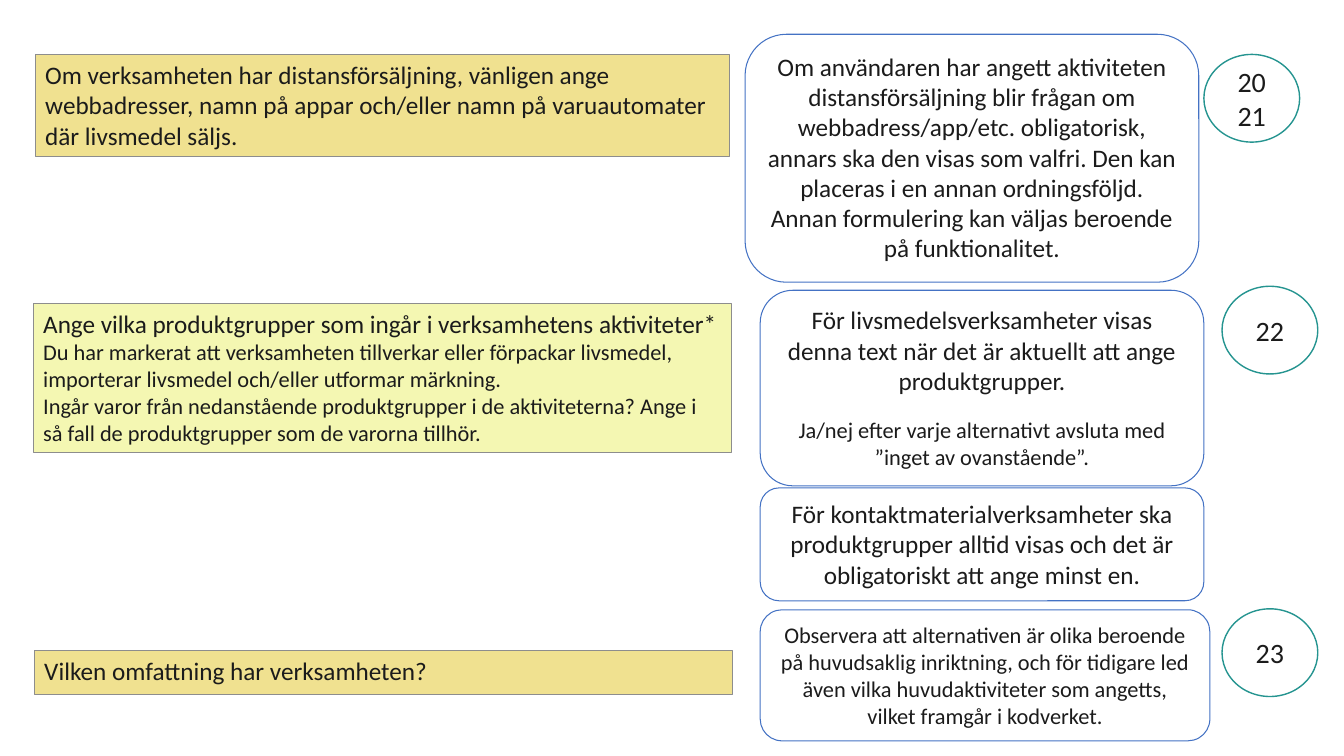
from dataclasses import dataclass

from pptx import Presentation
from pptx.dml.color import RGBColor
from pptx.enum.shapes import MSO_SHAPE
from pptx.enum.text import MSO_ANCHOR, MSO_AUTO_SIZE, PP_ALIGN
from pptx.util import Inches, Pt

RECT, ROUNDED, OVAL = MSO_SHAPE.RECTANGLE, MSO_SHAPE.ROUNDED_RECTANGLE, MSO_SHAPE.OVAL
LEFT, CENTER = PP_ALIGN.LEFT, PP_ALIGN.CENTER
TOP, MIDDLE = MSO_ANCHOR.TOP, MSO_ANCHOR.MIDDLE
FIT, FIXED = MSO_AUTO_SIZE.SHAPE_TO_FIT_TEXT, MSO_AUTO_SIZE.NONE


@dataclass(frozen=True)
class Theme:
    font: str = "Calibri"
    ink: str = "1B1B1B"
    white: str = "FFFFFF"
    sand: str = "F0E190"
    lime: str = "F4F7B2"
    grey: str = "8D8D8D"
    blue: str = "4472C4"
    teal: str = "259490"
    number: int = 20
    body: int = 18
    small: int = 16


T = Theme()


def add_box(kind, at, paragraphs, *, fill=None, line, width, align=CENTER,
            anchor=TOP, fit=FIT):
    """Add an outlined shape; each paragraph is (text, size, space before)."""
    sp = slide.shapes.add_shape(kind, *map(Inches, at))
    sp.shadow.inherit = False
    if fill:
        sp.fill.solid()
        sp.fill.fore_color.rgb = RGBColor.from_string(fill)
    else:
        sp.fill.background()
    sp.line.color.rgb = RGBColor.from_string(line)
    sp.line.width = Pt(width)
    tf = sp.text_frame
    tf.word_wrap = True
    tf.auto_size = fit
    tf.vertical_anchor = anchor
    for i, (text, size, before) in enumerate(paragraphs):
        p = tf.paragraphs[0] if i == 0 else tf.add_paragraph()
        p.alignment = align
        if before:
            p.space_before = Pt(before)
        r = p.add_run()
        r.text = text
        r.font.name = T.font
        r.font.size = Pt(size)
        r.font.color.rgb = RGBColor.from_string(T.ink)


prs = Presentation()
prs.slide_width, prs.slide_height = Inches(13.33), Inches(7.5)
slide = prs.slides.add_slide(prs.slide_layouts[6])

# Questions in the form
questions = [
    ((0.35, 0.54, 6.88, 1.01), T.sand, [
        ("Om verksamheten har distansförsäljning, vänligen ange webbadresser, "
         "namn på appar och/eller namn på varuautomater där livsmedel säljs.", T.body, 0)]),
    ((0.33, 3.01, 6.92, 1.48), T.lime, [
        ("Ange vilka produktgrupper som ingår i verksamhetens aktiviteter*", T.body, 0),
        ("Du har markerat att verksamheten tillverkar eller förpackar livsmedel, "
         "importerar livsmedel och/eller utformar märkning.", T.small, 0),
        ("Ingår varor från nedanstående produktgrupper i de aktiviteterna? Ange i så "
         "fall de produktgrupper som de varorna tillhör.", T.small, 0)]),
    ((0.34, 6.45, 6.92, 0.44), T.sand, [
        ("Vilken omfattning har verksamheten?", T.body, 0)]),
]
for at, fill, paragraphs in questions:
    add_box(RECT, at, paragraphs, fill=fill, line=T.grey, width=0.5, align=LEFT)

# Guidance beside each question
notes = [
    ((7.39, 0.34, 4.5, 2.46), None, [
        ("Om användaren har angett aktiviteten distansförsäljning blir frågan om "
         "webbadress/app/etc. obligatorisk, annars ska den visas som valfri. Den kan "
         "placeras i en annan ordningsföljd. Annan formulering kan väljas beroende på "
         "funktionalitet.", T.body, 0)]),
    ((7.54, 2.88, 4.4, 1.94), None, [
        ("För livsmedelsverksamheter visas denna text när det är aktuellt att ange "
         "produktgrupper.", T.body, 0),
        ("Ja/nej efter varje alternativt avsluta med ”inget av ovanstående”.",
         T.small, 14.5)]),
    ((7.54, 4.84, 4.4, 1.12), None, [
        ("För kontaktmaterialverksamheter ska produktgrupper alltid visas och det är "
         "obligatoriskt att ange minst en.", T.body, 0)]),
    ((7.54, 6.05, 4.46, 1.3), T.white, [
        ("Observera att alternativen är olika beroende på huvudsaklig inriktning, och "
         "för tidigare led även vilka huvudaktiviteter som angetts, vilket framgår i "
         "kodverket.", T.small, 0)]),
]
for at, fill, paragraphs in notes:
    add_box(ROUNDED, at, paragraphs, fill=fill, line=T.blue, width=0.75)

# Question numbers
for x, y, numbers in [(11.94, 0.54, ["20", "21"]), (12.12, 2.84, ["22"]),
                      (12.12, 6.04, ["23"])]:
    add_box(OVAL, (x, y, 0.95, 0.87), [(n, T.number, 0) for n in numbers],
            fill=T.white, line=T.teal, width=1, anchor=MIDDLE, fit=FIXED)

prs.save("out.pptx")
